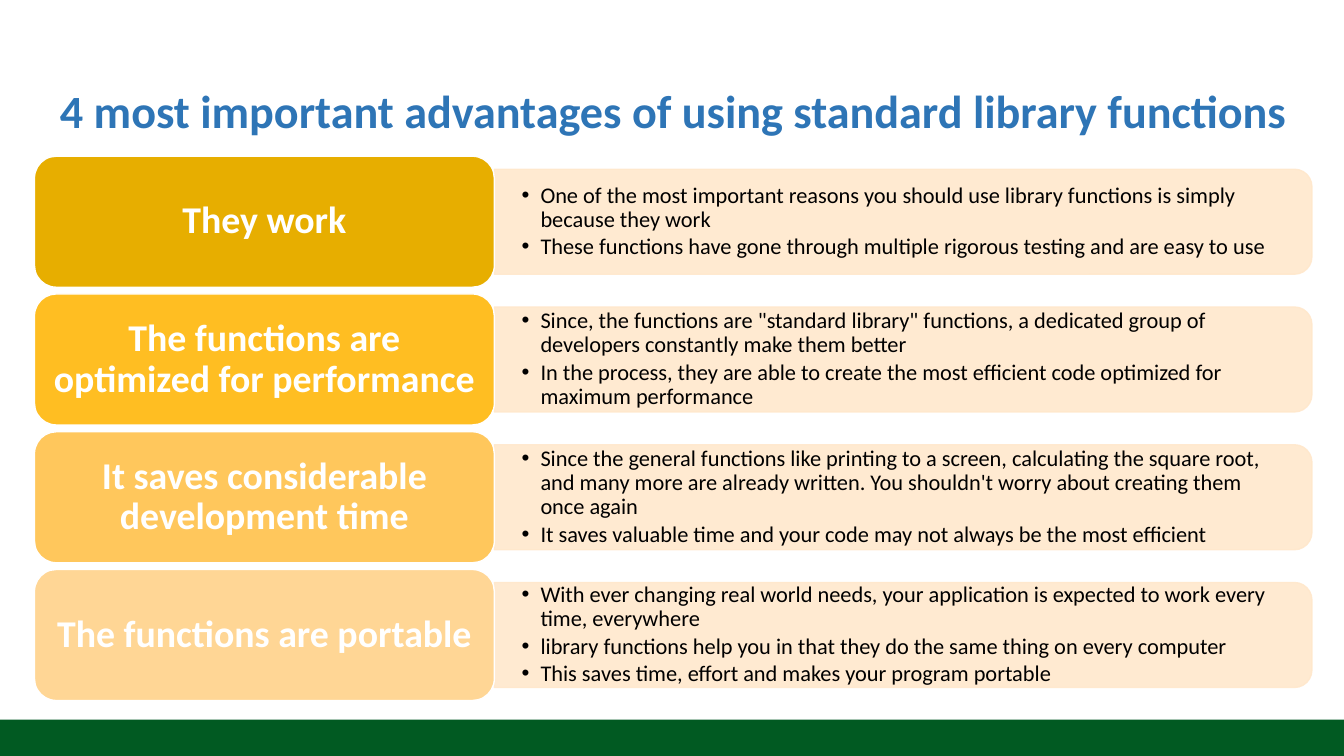
from lxml import etree
from pptx import Presentation
from pptx.dml.color import RGBColor
from pptx.enum.shapes import MSO_SHAPE as SHAPE
from pptx.enum.text import MSO_ANCHOR as ANCHOR, PP_ALIGN as ALIGN
from pptx.oxml.ns import qn
from pptx.util import Pt

FONT = "Calibri"
BLUE, GREEN, PEACH, WHITE, BLACK = "2E75B6", "015A22", "FFE8CC", "FFFFFF", "000000"

TITLE = "4 most important advantages of using standard library functions"
ADVANTAGES = [
    ("They work", "E7AE00", [
        "One of the most important reasons you should use library functions is simply because they work",
        "These functions have gone through multiple rigorous testing and are easy to use",
    ]),
    ("The functions are optimized for performance", "FFBE22", [
        'Since, the functions are "standard library" functions, a dedicated group of '
        "developers constantly make them better",
        "In the process, they are able to create the most efficient code optimized for maximum performance",
    ]),
    ("It saves considerable development time", "FFC75C", [
        "Since the general functions like printing to a screen, calculating the square root, "
        "and many more are already written. You shouldn't worry about creating them once again",
        "It saves valuable time and your code may not always be the most efficient",
    ]),
    ("The functions are portable", "FFD695", [
        "With ever changing real world needs, your application is expected to work every time, everywhere",
        "library functions help you in that they do the same thing on every computer",
        "This saves time, effort and makes your program portable",
    ]),
]

LABEL_LEFT, LABEL_TOP, LABEL_W, LABEL_H = 24.6, 111.6, 328.5, 93.6
PITCH = 98.4
PANEL_LEFT, PANEL_W, PANEL_H = 353.1, 584, 75
TEXT_W, TEXT_H = 580.3, 67.7
BULLET_INDENT = 13.5


def rgb(color):
    return RGBColor.from_string(color)


class Deck:
    def __init__(self, width, height):
        self.prs = Presentation()
        self.prs.slide_width, self.prs.slide_height = Pt(width), Pt(height)
        self.slide = self.prs.slides.add_slide(self.prs.slide_layouts[6])

    def shape(self, kind, x, y, w, h, fill, line=None):
        sp = self.slide.shapes.add_shape(kind, Pt(x), Pt(y), Pt(w), Pt(h))
        sp.shadow.inherit = False
        sp.fill.solid()
        sp.fill.fore_color.rgb = rgb(fill)
        if line:
            sp.line.color.rgb = rgb(line)
            sp.line.width = Pt(1)
        else:
            sp.line.fill.background()
        return sp

    def panel(self, x, y, w, h):
        """Translucent panel rounded on its right side: a round-top shape turned by 90 degrees."""
        sp = self.shape(SHAPE.ROUND_2_SAME_RECTANGLE, x + (w - h) / 2, y + (h - w) / 2, h, w, PEACH, PEACH)
        sp.rotation = 90
        for color in sp._element.spPr.iter(qn("a:srgbClr")):
            etree.SubElement(color, qn("a:alpha"), val="90000")

    def box(self, x, y, w, h):
        return self.slide.shapes.add_textbox(Pt(x), Pt(y), Pt(w), Pt(h))

    def text(self, sp, lines, size, color, insets, bold=False, align=ALIGN.CENTER, bullet=False):
        tf = sp.text_frame
        tf.word_wrap = True
        tf.vertical_anchor = ANCHOR.MIDDLE
        tf.margin_left = tf.margin_right = Pt(insets[0])
        tf.margin_top = tf.margin_bottom = Pt(insets[1])
        tf.text = "\n".join(lines)
        for p in tf.paragraphs:
            p.alignment = align
            p.line_spacing = 0.9
            if bullet:
                self.bullet(p)
            for r in p.runs:
                r.font.name = FONT
                r.font.size = Pt(size)
                r.font.bold = bold
                r.font.color.rgb = rgb(color)

    def bullet(self, p):
        p.space_after = Pt(2.4)
        pPr = p._p.get_or_add_pPr()
        pPr.set("marL", str(Pt(BULLET_INDENT)))
        pPr.set("indent", str(-Pt(BULLET_INDENT)))
        etree.SubElement(pPr, qn("a:buFont"), typeface="Arial")
        etree.SubElement(pPr, qn("a:buChar"), char="•")


def main():
    deck = Deck(960, 540)
    deck.shape(SHAPE.RECTANGLE, 0, 514, 960, 26, GREEN)
    deck.text(deck.box(24.6, 28.8, 913, 104.4), [TITLE], 33, BLUE, (7.2, 3.6), bold=True)

    for i, (name, fill, points) in enumerate(ADVANTAGES):
        top = LABEL_TOP + i * PITCH
        middle = top + LABEL_H / 2
        deck.panel(PANEL_LEFT, middle - PANEL_H / 2, PANEL_W, PANEL_H)
        deck.text(deck.box(PANEL_LEFT, middle - TEXT_H / 2, TEXT_W, TEXT_H), points, 16, BLACK,
                  (19.5, 10), align=ALIGN.LEFT, bullet=True)
        label = deck.shape(SHAPE.ROUNDED_RECTANGLE, LABEL_LEFT, top, LABEL_W, LABEL_H, fill, WHITE)
        deck.text(label, [name], 27, WHITE, (7, 4), bold=True)

    deck.prs.save("out.pptx")


if __name__ == "__main__":
    main()
